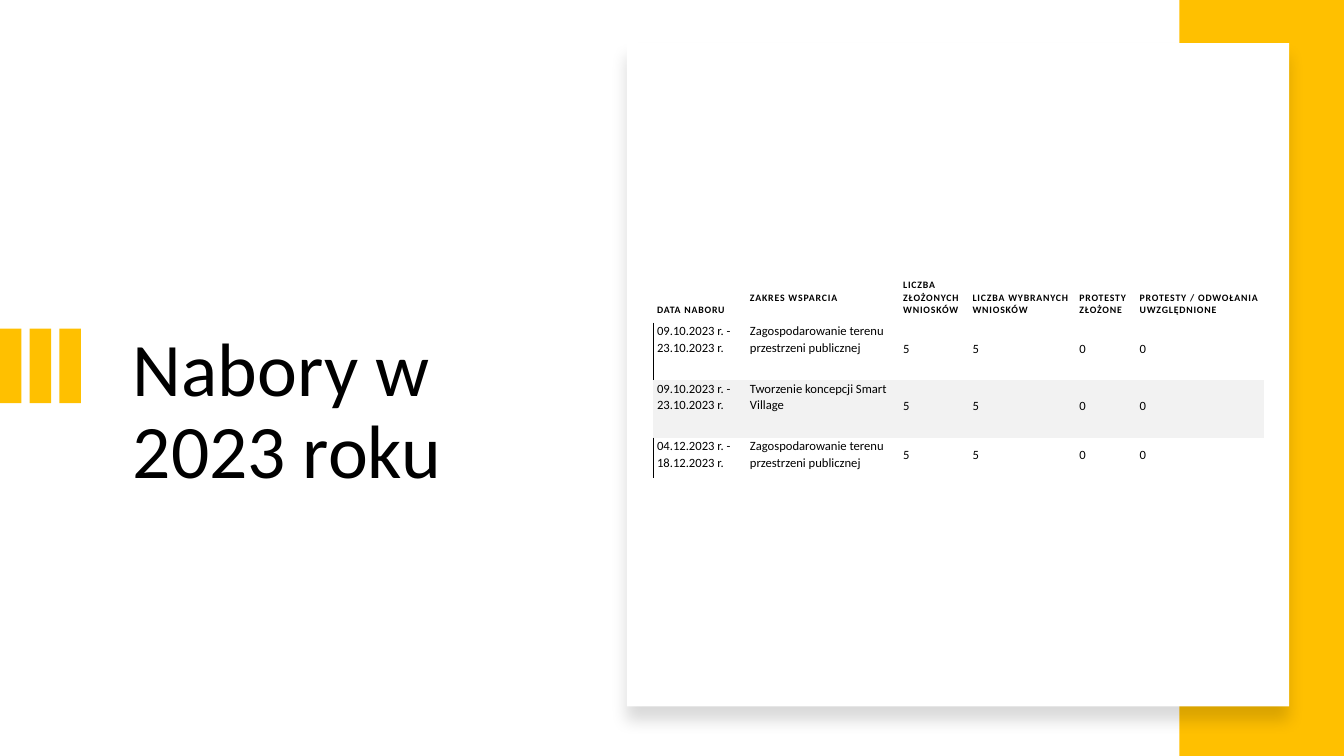
from lxml import etree
from pptx import Presentation
from pptx.dml.color import RGBColor
from pptx.enum import shapes, text
from pptx.oxml import parse_xml
from pptx.oxml.ns import qn
from pptx.util import Cm, Pt

DRAWING = 'xmlns:a="http://schemas.openxmlformats.org/drawingml/2006/main"'
YELLOW, WHITE, BLACK, GREY = "FFC000", "FFFFFF", "000000", "F2F2F2"
FONT = "Calibri"
PLAIN_TABLE = "{2D5ABB26-0587-4C30-8999-92F81FD0307C}"

COLUMNS = [2.34, 3.86, 1.75, 2.69, 1.52, 3.24]
ROWS = [1.27, 1.45, 1.45, 1.02]
HEADINGS = ["DATA NABORU", "ZAKRES WSPARCIA", "LICZBA ZŁOŻONYCH WNIOSKÓW",
            "LICZBA WYBRANYCH WNIOSKÓW", "PROTESTY ZŁOŻONE",
            "PROTESTY / ODWOŁANIA UWZGLĘDNIONE"]
CALLS = [
    ["09.10.2023 r. - 23.10.2023 r.", "Zagospodarowanie terenu przestrzeni publicznej",
     "5", "5", "0", "0"],
    ["09.10.2023 r. - 23.10.2023 r.", "Tworzenie koncepcji Smart Village",
     "5", "5", "0", "0"],
    ["04.12.2023 r. - 18.12.2023 r.", "Zagospodarowanie terenu przestrzeni publicznej",
     "5", "5", "0", "0"],
]


def color(value):
    return RGBColor.from_string(value)


def add_rectangle(page, box, fill):
    rectangle = page.shapes.add_shape(
        shapes.MSO_SHAPE.RECTANGLE, *[Cm(length) for length in box])
    rectangle.shadow.inherit = False
    rectangle.fill.solid()
    rectangle.fill.fore_color.rgb = color(fill)
    rectangle.line.fill.background()
    return rectangle


def add_span(para, words, size, bold=False):
    span = para.add_run()
    span.text = words
    span.font.name = FONT
    span.font.size = Pt(size)
    span.font.bold = bold
    span.font.color.rgb = color(BLACK)
    return span


def add_title(page, box):
    title = page.shapes.add_textbox(*[Cm(length) for length in box])
    title.text_frame.word_wrap = True
    para = title.text_frame.paragraphs[0]
    para.line_spacing = 0.9
    add_span(para, "Nabory w 2023 roku", 54)


def add_bars(page, box, count=3, gap=0.21):
    left, top, width, height = box
    bar = (width - gap * (count - 1)) / count
    for index in range(count):
        add_rectangle(page, (left + index * (bar + gap), top, bar, height), YELLOW)


def add_card(page, box):
    card = add_rectangle(page, box, WHITE)
    effects = card._element.spPr.find(qn("a:effectLst"))
    effects.append(parse_xml(
        f'<a:outerShdw {DRAWING} blurRad="{Pt(11)}" dist="{Pt(10)}" dir="5400000" '
        f'algn="t" rotWithShape="0"><a:srgbClr val="{BLACK}">'
        '<a:alpha val="15000"/></a:srgbClr></a:outerShdw>'))


def fill_cell(cell, words, heading, anchor):
    cell.margin_left = cell.margin_right = Cm(0.1)
    cell.margin_top = Cm(0.15 if heading else 0)
    cell.margin_bottom = Cm(0.15)
    cell.vertical_anchor = anchor
    para = cell.text_frame.paragraphs[0]
    para.line_spacing = 1.07
    para.space_after = Pt(8)
    span = add_span(para, words, 7 if heading else 9, heading)
    if heading:
        span.font._element.set("spc", "60")


def add_left_border(cell):
    cell._tc.get_or_add_tcPr().insert(0, parse_xml(
        f'<a:lnL {DRAWING} w="{Pt(1)}"><a:solidFill><a:srgbClr val="{BLACK}"/>'
        '</a:solidFill></a:lnL>'))


def add_calls_table(page, left, top):
    frame = page.shapes.add_table(
        len(ROWS), len(COLUMNS), Cm(left), Cm(top), Cm(sum(COLUMNS)), Cm(sum(ROWS)))
    table = frame.table
    table.first_row = table.horz_banding = False
    table._tbl.tblPr.find(qn("a:tableStyleId")).text = PLAIN_TABLE
    for column, width in zip(table.columns, COLUMNS):
        column.width = Cm(width)
    for row, height in zip(table.rows, ROWS):
        row.height = Cm(height)

    for row, entries in enumerate([HEADINGS] + CALLS):
        shaded = row == 2
        for column, words in enumerate(entries):
            cell = table.cell(row, column)
            if row == 0:
                anchor = text.MSO_ANCHOR.BOTTOM
            elif column < 2:
                anchor = text.MSO_ANCHOR.TOP
            else:
                anchor = text.MSO_ANCHOR.MIDDLE
            fill_cell(cell, words, row == 0, anchor)
            if shaded:
                cell.fill.solid()
                cell.fill.fore_color.rgb = color(GREY)
            else:
                cell.fill.background()
        if row and not shaded:
            add_left_border(table.cell(row, 0))
    # The scope heading sits one line above the others
    table.cell(0, 1).margin_bottom = Cm(0.47)


def main():
    deck = Presentation()
    deck.slide_width, deck.slide_height = Cm(33.87), Cm(19.05)
    page = deck.slides.add_slide(deck.slide_layouts[6])

    # Title side
    add_title(page, (3.1, 8.23, 11.2, 6.63))
    add_bars(page, (0, 8.28, 2.04, 1.88))

    # Table side: yellow band, raised card, table
    add_rectangle(page, (29.72, 0, 4.15, 19.05), YELLOW)
    add_card(page, (15.8, 1.09, 16.69, 16.71))
    add_calls_table(page, 16.46, 6.86)

    deck.save("out.pptx")


if __name__ == "__main__":
    main()
